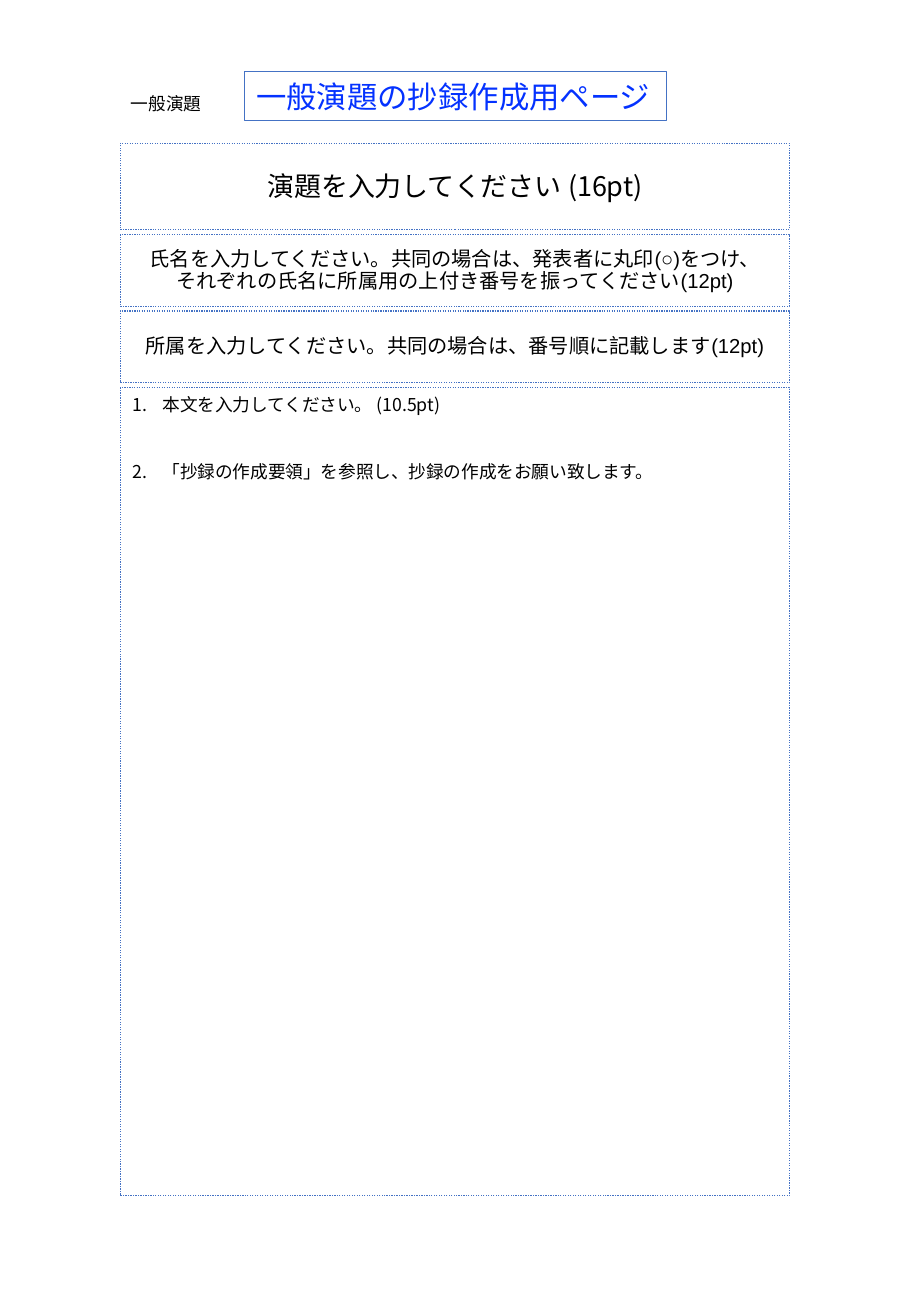
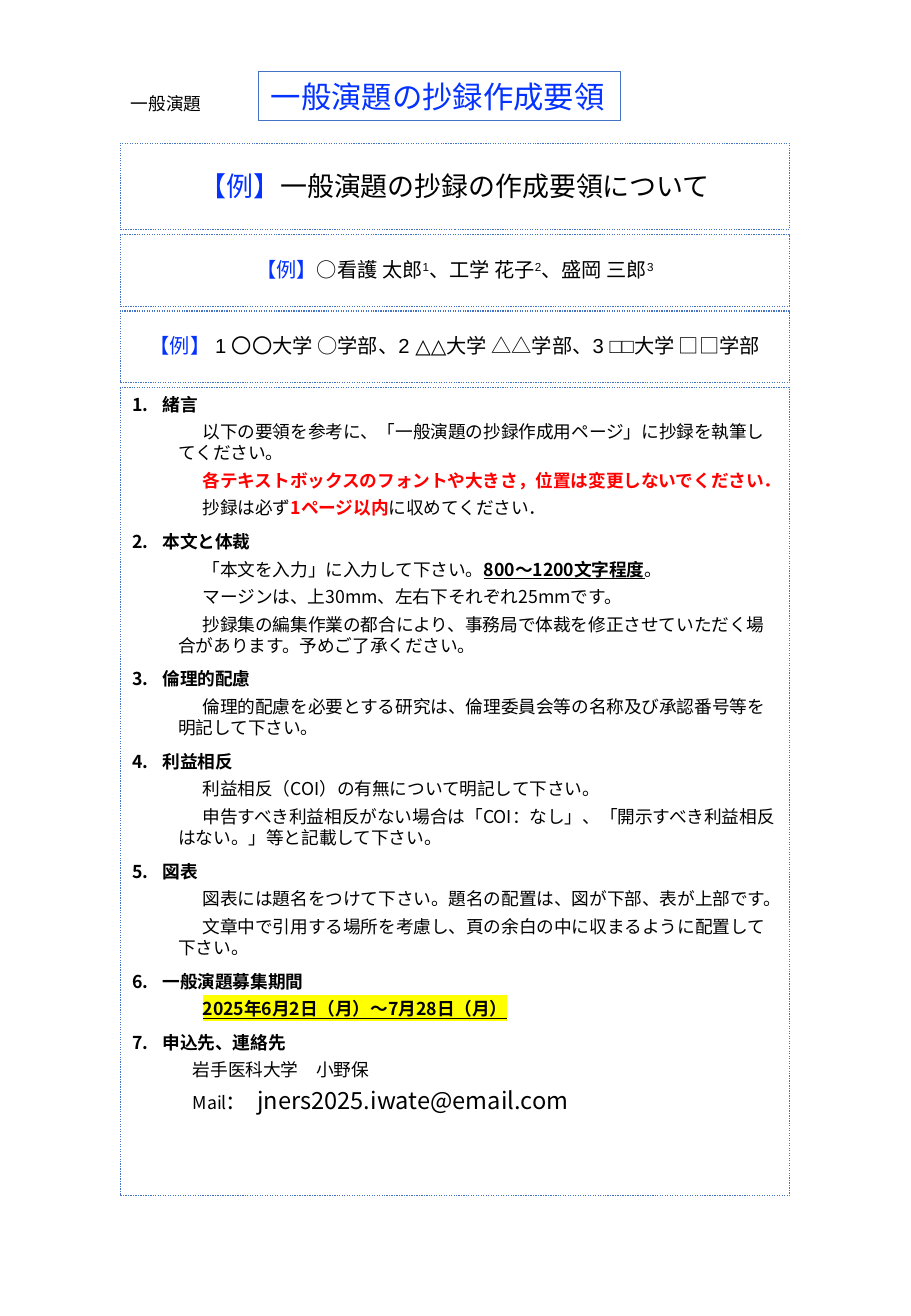
import pptx
import pptx.util
import pptx.dml.color
import pptx.enum.dml
import pptx.enum.text
import pptx.oxml.ns
import lxml.etree

Inches, Pt = pptx.util.Inches, pptx.util.Pt
ALIGN = pptx.enum.text.PP_ALIGN
MID = pptx.enum.text.MSO_ANCHOR.MIDDLE
TOP = pptx.enum.text.MSO_ANCHOR.TOP
NOTO, ARIAL, CALIBRI = "Noto Sans CJK JP", "Arial", "Calibri"
BLACK, BLUE, RED, EDGE, YELLOW = "000000", "0432FF", "FF0000", "4472C4", "FFFF00"

# Run styles
BOLD = {"bold": True}
ALERT = {"bold": True, "color": RED}
UNDER = {"bold": True, "under": True}
MARK = {"bold": True, "under": True, "mark": YELLOW}
TAG = {"color": BLUE}
SUP = {"sup": True}
BIG = {"size": 14}

# Paragraph styles: level, left margin, first indent, space before, line height
KINDS = {
    "num": (0, 0.25, -0.25, 7.5, 12.5),
    "next": (0, 0.25, -0.25, 27.5, 12.5),
    "text": (1, 0.38, 0.2, 3.8, 12.5),
    "flat": (2, 0.5, 0, 3.8, 12.5),
    "mail": (2, 0.5, 0, 3.8, 16),
}

# Framed fields: top, height, font, size, line height
LEFT, WIDTH = 0.99, 5.51
FIELDS = {
    "title": (1.18, 0.71, NOTO, 16, 18),
    "names": (1.93, 0.59, ARIAL, 12, 13),
    "units": (2.56, 0.59, ARIAL, 12, 13),
}
BODY_TOP, BODY_HIGH = 3.19, 6.65

# Content: a field is a list of lines, a line is a list of runs
PAGES = [
    {
        "head": ("一般演題の抄録作成用ページ", 2.01, 3.48),
        "title": [[("演題を入力してください (16pt)", {})]],
        "names": [
            [("氏名を入力してください。共同の場合は、発表者に丸印(○)をつけ、", {})],
            [("それぞれの氏名に所属用の上付き番号を振ってください(12pt)", {})],
        ],
        "units": [[("所属を入力してください。共同の場合は、番号順に記載します(12pt)", {})]],
        "body": [
            ("num", [("本文を入力してください。 (10.5pt)", {})]),
            ("next", [("「抄録の作成要領」を参照し、抄録の作成をお願い致します。", {})]),
        ],
    },
    {
        "head": ("一般演題の抄録作成要領", 2.13, 2.98),
        "title": [[("【例】", TAG), ("一般演題の抄録の作成要領について", {})]],
        "names": [[
            ("【例】", TAG), ("○看護 太郎", {}), ("1", SUP),
            ("、工学 花子", {}), ("2", SUP), ("、盛岡 三郎", {}), ("3", SUP),
        ]],
        "units": [[
            ("【例】 ", TAG),
            ("1 〇〇大学 ○学部、2 △△大学 △△学部、3 □□大学 □□学部", {}),
        ]],
        "body": [
            ("num", [("緒言", BOLD)]),
            ("text", [("以下の要領を参考に、「一般演題の抄録作成用ページ」に抄録を執筆してください。", {})]),
            ("text", [("各テキストボックスのフォントや大きさ，位置は変更しないでください．", ALERT)]),
            ("text", [("抄録は必ず", {}), ("1ページ以内", ALERT), ("に収めてください．", {})]),
            ("num", [("本文と体裁", BOLD)]),
            ("text", [("「本文を入力」に入力して下さい。", {}), ("800〜1200文字程度", UNDER), ("。", {})]),
            ("text", [("マージンは、上30mm、左右下それぞれ25mmです。", {})]),
            ("text", [("抄録集の編集作業の都合により、事務局で体裁を修正させていただく場合があります。予めご了承ください。", {})]),
            ("num", [("倫理的配慮", BOLD)]),
            ("text", [("倫理的配慮を必要とする研究は、倫理委員会等の名称及び承認番号等を明記して下さい。", {})]),
            ("num", [("利益相反", BOLD)]),
            ("text", [("利益相反（COI）の有無について明記して下さい。", {})]),
            ("text", [("申告すべき利益相反がない場合は「COI：なし」、「開示すべき利益相反はない。」等と記載して下さい。", {})]),
            ("num", [("図表", BOLD)]),
            ("text", [("図表には題名をつけて下さい。題名の配置は、図が下部、表が上部です。", {})]),
            ("text", [("文章中で引用する場所を考慮し、頁の余白の中に収まるように配置して下さい。", {})]),
            ("num", [("一般演題募集期間", BOLD)]),
            ("text", [("2025年6月2日（月）〜7月28日（月）", MARK)]),
            ("num", [("申込先、連絡先", BOLD)]),
            ("flat", [("岩手医科大学　小野保", {})]),
            ("mail", [("Mail", {}), (":　jners2025.iwate@email.com", BIG)]),
        ],
    },
]


def paint(text):
    return pptx.dml.color.RGBColor.from_string(text)


def sub(parent, tag, **attrs):
    return lxml.etree.SubElement(parent, pptx.oxml.ns.qn(tag), attrs)


def add_box(slide, left, top, wide, high, edge=True, dash=True, wrap=True, anchor=MID):
    box = slide.shapes.add_textbox(*map(Inches, (left, top, wide, high)))
    if edge:
        box.line.color.rgb = paint(EDGE)
        box.line.width = Pt(0.75)
        if dash:
            box.line.dash_style = pptx.enum.dml.MSO_LINE.ROUND_DOT
    frame = box.text_frame
    frame.word_wrap = wrap
    frame.vertical_anchor = anchor
    return frame


def add_run(para, text, face, size, color=BLACK, bold=False, under=False, mark=None, sup=False):
    run = para.add_run()
    run.text = text
    font = run.font
    font.name, font.size, font.bold = face, Pt(size), bold
    font.color.rgb = paint(color)
    if under:
        font.underline = True
    props = run._r.get_or_add_rPr()
    if sup:
        props.set("baseline", "30000")
    if mark:
        light = sub(props, "a:highlight")
        sub(light, "a:srgbClr", val=mark)
        props.find(pptx.oxml.ns.qn("a:solidFill")).addnext(light)


def add_field(slide, lines, top, high, face, size, pitch):
    para = add_box(slide, LEFT, top, WIDTH, high).paragraphs[0]
    para.alignment = ALIGN.CENTER
    para.line_spacing = Pt(pitch)
    for i, line in enumerate(lines):
        if i:
            para.add_line_break()
        for text, style in line:
            add_run(para, text, face, **{"size": size, **style})


def add_body(slide, items):
    frame = add_box(slide, LEFT, BODY_TOP, WIDTH, BODY_HIGH, anchor=TOP)
    for i, (kind, runs) in enumerate(items):
        para = frame.add_paragraph() if i else frame.paragraphs[0]
        level, margin, indent, before, pitch = KINDS[kind]
        props = para._p.get_or_add_pPr()
        props.set("marL", str(Inches(margin)))
        props.set("indent", str(Inches(indent)))
        if kind in ("num", "next"):
            sub(props, "a:buFont", typeface=NOTO)
            sub(props, "a:buAutoNum", type="arabicPeriod")
        para.level = level
        para.line_spacing = Pt(pitch)
        if i:
            para.space_before = Pt(before)
        for text, style in runs:
            add_run(para, text, NOTO, **{"size": 10.5, **style})


def add_page(deck, page):
    slide = deck.slides.add_slide(deck.slide_layouts[6])
    # Running label
    label = add_box(slide, 0.98, 0.71, 0.82, 0.29, edge=False, wrap=False)
    add_run(label.paragraphs[0], "一般演題", CALIBRI, 10.5)
    # Body and framed fields
    add_body(slide, page["body"])
    for name, look in FIELDS.items():
        add_field(slide, page[name], *look)
    # Page heading
    text, left, wide = page["head"]
    head = add_box(slide, left, 0.59, wide, 0.4, dash=False, wrap=False)
    add_run(head.paragraphs[0], text, CALIBRI, 18, BLUE)


def main():
    deck = pptx.Presentation()
    deck.slide_width, deck.slide_height = Inches(7.5), Inches(10.83)
    for page in PAGES:
        add_page(deck, page)
    deck.save("out.pptx")


if __name__ == "__main__":
    main()
